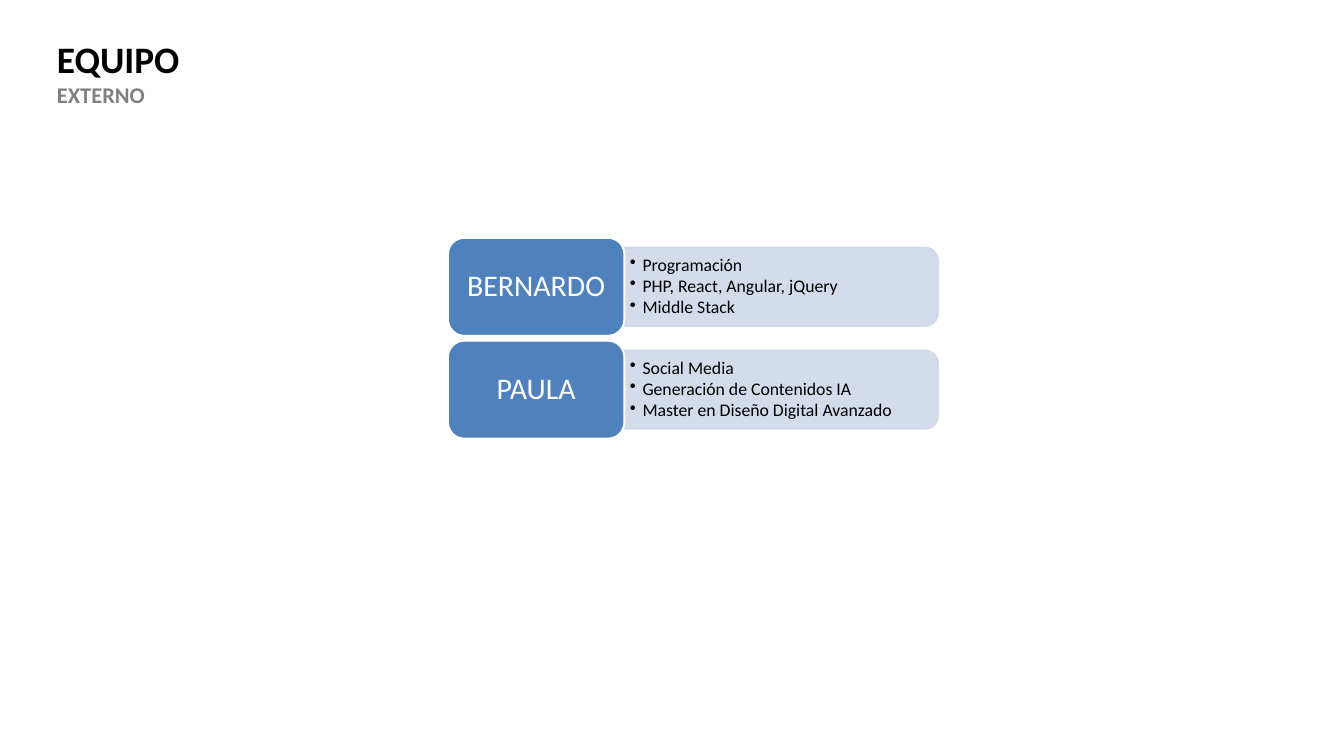
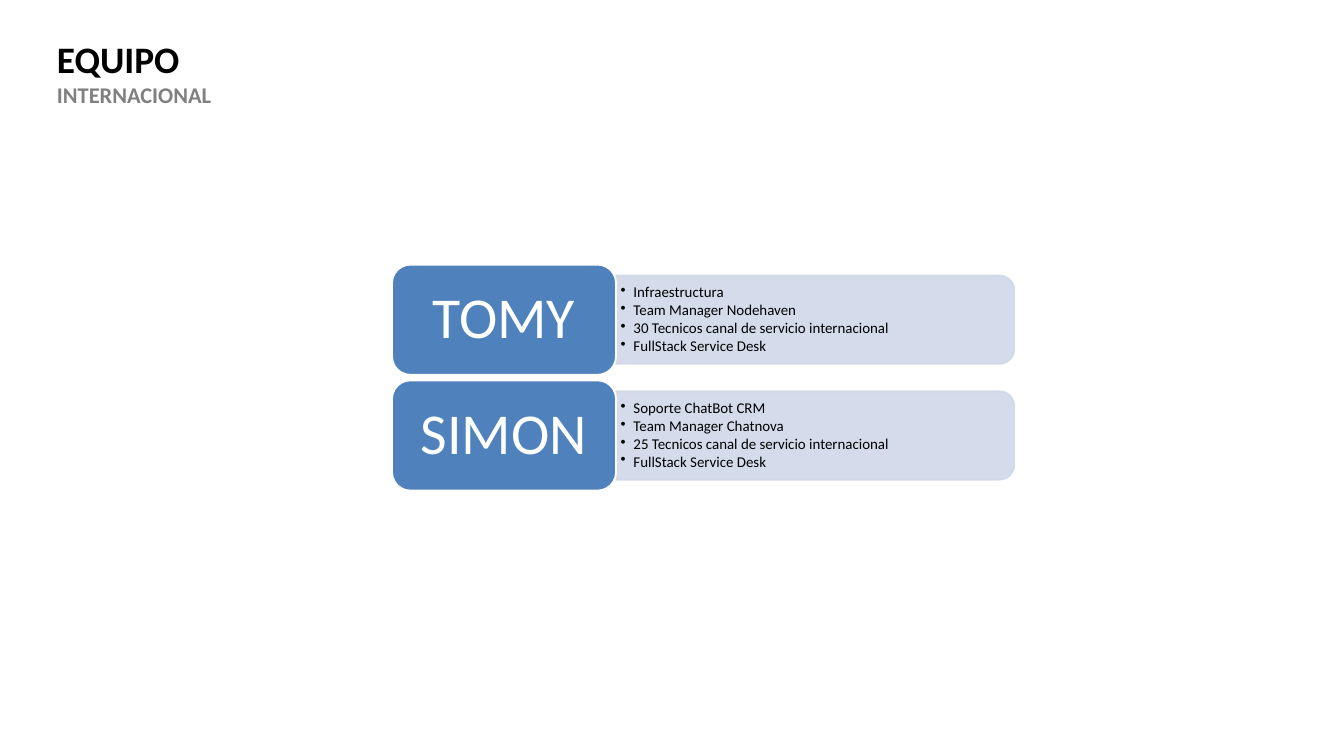
from dataclasses import dataclass
from lxml.etree import SubElement
from pptx import Presentation
from pptx.dml.color import RGBColor
from pptx.enum.shapes import MSO_SHAPE
from pptx.enum.text import MSO_ANCHOR, MSO_AUTO_SIZE, PP_ALIGN
from pptx.oxml.ns import qn
from pptx.util import Inches, Pt


@dataclass(frozen=True)
class Theme:
    """Colours, type sizes and the grid that the slides share."""
    font: str = "Calibri"
    ink: str = "000000"
    grey: str = "808080"
    blue: str = "4F81BD"
    pale: str = "D0D8E8"
    white: str = "FFFFFF"
    head: int = 40
    sub: int = 24
    wide: int = Inches(20)
    high: int = Inches(11.25)
    col: int = Inches(20 / 24)
    row: int = Inches(11.25 / 24)


@dataclass(frozen=True)
class Plan:
    """Place of a team list in grid units, with its type sizes and insets."""
    left: float
    top: float
    width: float
    height: float
    name: int
    item: int
    name_pad: tuple
    item_pad: tuple


THEME = Theme()
SMALL = Plan(8, 7.55, 3.15, 3.11, 32, 19, (0.13, 0.07), (0.08, 0.04))
LARGE = Plan(7, 8.4, 4, 3.5, 62, 16, (0.26, 0.13), (0.07, 0.03))

SLIDES = [
    ("EXTERNO", 2.45, SMALL, {
        "BERNARDO": ["Programación", "PHP, React, Angular, jQuery", "Middle Stack"],
        "PAULA": ["Social Media", "Generación de Contenidos IA",
                  "Master en Diseño Digital Avanzado"],
    }),
    ("INTERNACIONAL", 3.02, LARGE, {
        "TOMY": ["Infraestructura", "Team Manager Nodehaven",
                 "30 Tecnicos canal de servicio internacional",
                 "FullStack Service Desk"],
        "SIMON": ["Soporte ChatBot CRM", "Team Manager Chatnova",
                  "25 Tecnicos canal de servicio internacional",
                  "FullStack Service Desk"],
    }),
]


def write(frame, text, size, color=THEME.ink, bold=False, align=PP_ALIGN.LEFT,
          lead=None, after=None, bullet=False):
    """Add one formatted paragraph to a text frame."""
    first = frame.paragraphs[0]
    para = frame.add_paragraph() if first.runs else first
    if bullet:
        props = para._p.get_or_add_pPr()
        props.set("marL", str(Inches(0.19)))
        props.set("indent", str(Inches(-0.19)))
        SubElement(props, qn("a:buChar"), char="•")
    para.alignment = align
    para.line_spacing = lead
    if after is not None:
        para.space_after = Pt(after)
    run = para.add_run()
    run.text = text
    run.font.name = THEME.font
    run.font.size = Pt(size)
    run.font.bold = bold
    run.font.color.rgb = RGBColor.from_string(color)


def pad(frame, inset):
    """Centre a frame's text vertically within its (side, end) insets."""
    side, end = map(Inches, inset)
    frame.margin_left = frame.margin_right = side
    frame.margin_top = frame.margin_bottom = end
    frame.vertical_anchor = MSO_ANCHOR.MIDDLE
    frame.word_wrap = True


def block(slide, kind, box, fill, line, alpha=None):
    """Draw a filled preset shape, partly clear if alpha is given."""
    shape = slide.shapes.add_shape(kind, *map(int, box))
    shape.shadow.inherit = False
    shape.fill.solid()
    shape.fill.fore_color.rgb = RGBColor.from_string(fill)
    shape.line.color.rgb = RGBColor.from_string(line)
    shape.line.width = Pt(2)
    if alpha:
        for color in shape._element.spPr.iter(qn("a:srgbClr")):
            SubElement(color, qn("a:alpha"), val=str(alpha * 1000))
    return shape


def title(slide, sub, width):
    """Write the heading and its grey second line."""
    box = slide.shapes.add_textbox(
        int(0.9 * THEME.col), int(1.05 * THEME.row),
        int(width * THEME.col), int(2.52 * THEME.row))
    frame = box.text_frame
    frame.word_wrap = False
    frame.auto_size = MSO_AUTO_SIZE.SHAPE_TO_FIT_TEXT
    write(frame, "EQUIPO", THEME.head, bold=True)
    write(frame, sub, THEME.sub, THEME.grey, bold=True)


def panel(slide, left, mid, width, height, items, plan):
    """Draw a pale panel, rounded on its right, with a bullet list."""
    turned = (left + (width - height) / 2, mid - width / 2, height, width)
    shape = block(slide, MSO_SHAPE.ROUND_2_SAME_RECTANGLE, turned,
                  THEME.pale, THEME.pale, alpha=90)
    shape.rotation = 90
    inner = 0.9 * height
    box = slide.shapes.add_textbox(
        int(left), int(mid - inner / 2), int(0.99 * width), int(inner))
    pad(box.text_frame, plan.item_pad)
    for item in items:
        write(box.text_frame, item, plan.item, lead=0.9,
              after=round(0.12 * plan.item, 1), bullet=True)


def member(slide, plan, index, name, items):
    """Draw one row: the name block and the panel of skills beside it."""
    left, width = plan.left * THEME.col, plan.width * THEME.col
    height = plan.height * THEME.row
    top = plan.top * THEME.row + index * 1.05 * height
    panel(slide, left + width, top + height / 2, width * 16 / 9,
          0.8 * height, items, plan)
    shape = block(slide, MSO_SHAPE.ROUNDED_RECTANGLE,
                  (left, top, width, height), THEME.blue, THEME.white)
    pad(shape.text_frame, plan.name_pad)
    write(shape.text_frame, name, plan.name, THEME.white,
          align=PP_ALIGN.CENTER, lead=0.9)


def main():
    """Build both team slides and save them."""
    deck = Presentation()
    deck.slide_width, deck.slide_height = THEME.wide, THEME.high
    for sub, width, plan, team in SLIDES:
        slide = deck.slides.add_slide(deck.slide_layouts[6])
        title(slide, sub, width)
        for index, (name, items) in enumerate(team.items()):
            member(slide, plan, index, name, items)
    deck.save("out.pptx")


if __name__ == "__main__":
    main()
